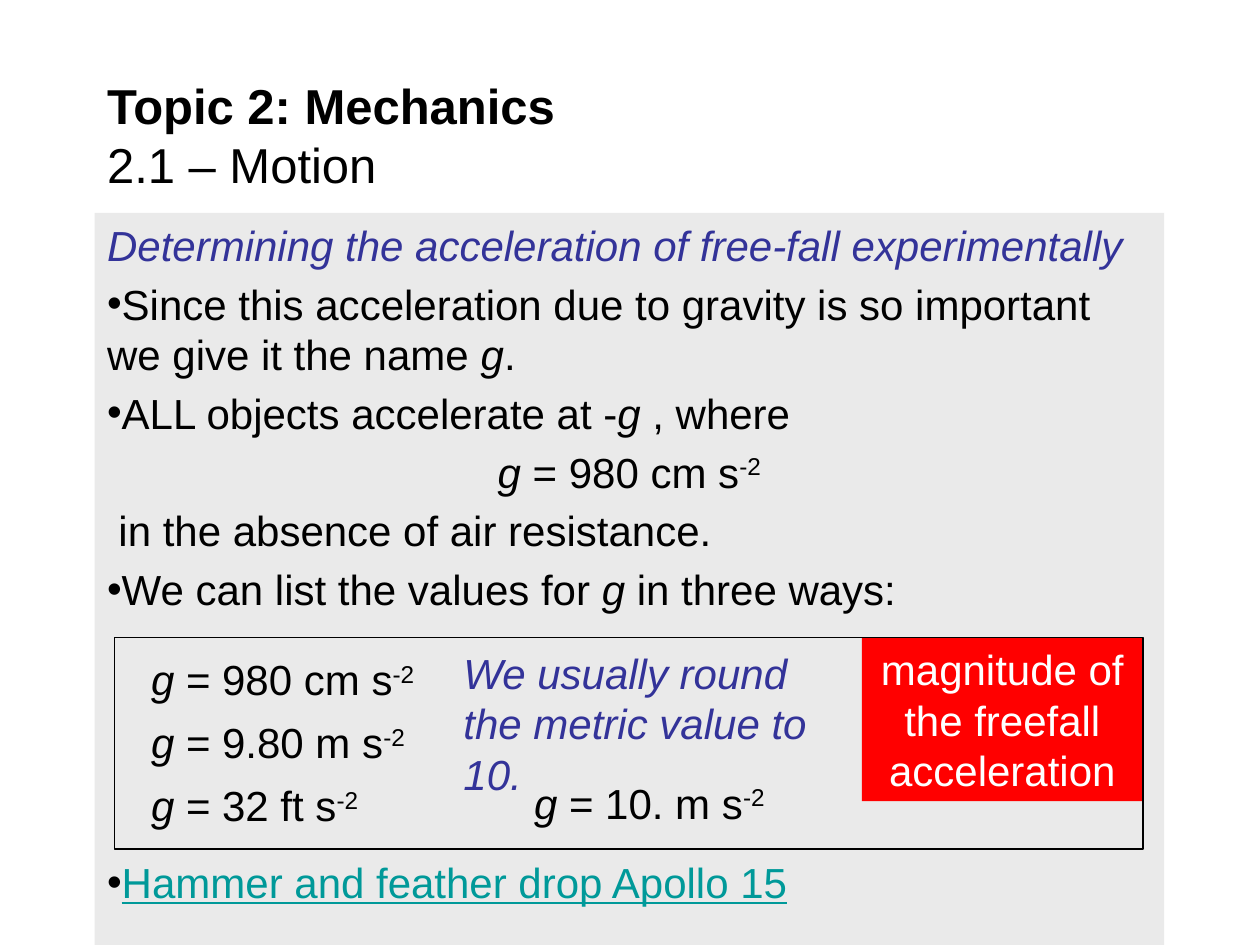
"""Build a physics slide on the acceleration of free fall."""
from lxml import etree
from pptx import Presentation
from pptx.dml.color import RGBColor
from pptx.enum.shapes import MSO_SHAPE
from pptx.enum.text import MSO_ANCHOR, MSO_AUTO_SIZE, PP_ALIGN
from pptx.oxml.ns import qn
from pptx.util import Inches, Pt

BLACK = RGBColor(0x00, 0x00, 0x00)
WHITE = RGBColor(0xFF, 0xFF, 0xFF)
GREY = RGBColor(0xEA, 0xEA, 0xEA)
INDIGO = RGBColor(0x33, 0x33, 0x99)
RED = RGBColor(0xFF, 0x00, 0x00)
TEAL = RGBColor(0x00, 0x99, 0x99)

RECTANGLE = MSO_SHAPE.RECTANGLE
TOP, MIDDLE = MSO_ANCHOR.TOP, MSO_ANCHOR.MIDDLE
LEFT, CENTER = PP_ALIGN.LEFT, PP_ALIGN.CENTER
NO_AUTOFIT = MSO_AUTO_SIZE.NONE

PLAIN, ITALIC, SUPER = "plain", "italic", "super"
G = ("g", ITALIC)


def place(shape, left, top, width, height):
    """Move and size a shape, in inches."""
    shape.left, shape.top = Inches(left), Inches(top)
    shape.width, shape.height = Inches(width), Inches(height)


def style_run(run, color=BLACK, size=24, style=PLAIN):
    """Apply font, size, colour and style to a run."""
    run.font.name = "Arial"
    run.font.size = Pt(size)
    run.font.color.rgb = color
    run.font.italic = style == ITALIC
    if style == SUPER:
        run.font._element.set("baseline", "30000")


def write(paragraph, pieces, color=BLACK):
    """Fill a paragraph with styled pieces of text."""
    for text, style in pieces:
        run = paragraph.add_run()
        run.text = text
        style_run(run, color, style=style)


def quantity(value):
    """Return the pieces of an equation giving g per second squared."""
    return [G, (f" = {value} s", PLAIN), ("-2", SUPER)]


def set_bullet(paragraph, bulleted, indent=0):
    """Set the left margin and switch the bullet on or off."""
    properties = paragraph._p.get_or_add_pPr()
    properties.set("marL", str(Inches(indent)))
    properties.set("indent", "0")
    if bulleted:
        etree.SubElement(properties, qn("a:buChar")).set("char", "•")
    else:
        etree.SubElement(properties, qn("a:buNone"))


def fill_title(title):
    """Write the topic and the section name."""
    place(title, 0.75, 0.58, 8.5, 0.98)
    frame = title.text_frame
    frame.text = "Topic 2: Mechanics\v2.1 – Motion"
    frame.auto_size = NO_AUTOFIT
    frame.vertical_anchor = MIDDLE
    heading = frame.paragraphs[0]
    heading.alignment = LEFT
    for run, bold in zip(heading.runs, (True, False)):
        style_run(run, size=28)
        run.font.bold = bold


def fill_body(body):
    """Write the explanation, leaving room for the panel of values."""
    place(body, 0.75, 1.69, 8.49, 5.81)
    body.fill.solid()
    body.fill.fore_color.rgb = GREY
    frame = body.text_frame
    frame.auto_size = NO_AUTOFIT
    frame.vertical_anchor = TOP

    gap, panel_gap = 4.8, 138.5
    lines = [
        ([("Determining the acceleration of free-fall experimentally", ITALIC)],
         INDIGO, False, 0, LEFT, 0),
        ([("Since this acceleration due to gravity is so important "
           "we give it the name ", PLAIN), G, (".", PLAIN)],
         BLACK, True, 0, LEFT, gap),
        ([("ALL objects accelerate at -", PLAIN), G, (" , where", PLAIN)],
         BLACK, True, 0, LEFT, gap),
        (quantity("980 cm"), BLACK, False, 0, CENTER, gap),
        ([("in the absence of air resistance.", PLAIN)],
         BLACK, False, 0.09, LEFT, gap),
        ([("We can list the values for ", PLAIN), G, (" in three ways:", PLAIN)],
         BLACK, True, 0, LEFT, gap),
    ]
    paragraph = frame.paragraphs[0]
    for pieces, color, bulleted, indent, alignment, before in lines:
        paragraph.alignment = alignment
        paragraph.space_before = Pt(before)
        set_bullet(paragraph, bulleted, indent)
        write(paragraph, pieces, color)
        paragraph = frame.add_paragraph()

    paragraph.space_before = Pt(panel_gap)
    set_bullet(paragraph, True)
    paragraph.font.color.rgb = BLACK
    write(paragraph, [("Hammer and feather drop Apollo 15", PLAIN)], TEAL)
    paragraph.runs[0].font.underline = True
    bullet_color = etree.Element(qn("a:buClr"))
    etree.SubElement(bullet_color, qn("a:srgbClr")).set("val", str(BLACK))
    paragraph._p.pPr.find(qn("a:buChar")).addprevious(bullet_color)


def add_label(shapes, pieces, left, top, width, height, color=BLACK):
    """Add a wrapping text box holding one paragraph."""
    label = shapes.add_textbox(Inches(left), Inches(top),
                               Inches(width), Inches(height))
    label.text_frame.word_wrap = True
    write(label.text_frame.paragraphs[0], pieces, color)
    return label


def add_frame(shapes, left, top, width, height):
    """Add an outlined rectangle without fill."""
    frame = shapes.add_shape(RECTANGLE, Inches(left), Inches(top),
                             Inches(width), Inches(height))
    frame.shadow.inherit = False
    frame.fill.background()
    frame.line.color.rgb = BLACK
    frame.line.width = Pt(1)


def add_values_panel(shapes):
    """Add the framed panel with the values of g."""
    caption = add_label(shapes, [("magnitude of the freefall acceleration", PLAIN)],
                        6.84, 5.06, 2.23, 1.3, WHITE)
    caption.fill.solid()
    caption.fill.fore_color.rgb = RED
    caption.text_frame.paragraphs[0].alignment = CENTER
    add_frame(shapes, 0.91, 5.06, 8.16, 1.68)

    for row, value in enumerate(("980 cm", "9.80 m", "32 ft")):
        add_label(shapes, quantity(value), 1.1, 5.14 + 0.5 * row, 2.99, 0.5)
    add_label(shapes, [("We usually round the metric value to 10.", ITALIC)],
              3.58, 5.09, 3.25, 1.31, INDIGO)
    add_label(shapes, quantity("10. m"), 4.14, 6.12, 2.99, 0.5)


def main():
    """Build and save the slide."""
    presentation = Presentation()
    presentation.slide_width = Inches(10)
    presentation.slide_height = Inches(7.5)
    slide = presentation.slides.add_slide(presentation.slide_layouts[1])
    fill_title(slide.shapes.title)
    fill_body(slide.placeholders[1])
    add_values_panel(slide.shapes.add_group_shape().shapes)
    presentation.save("out.pptx")


if __name__ == "__main__":
    main()
